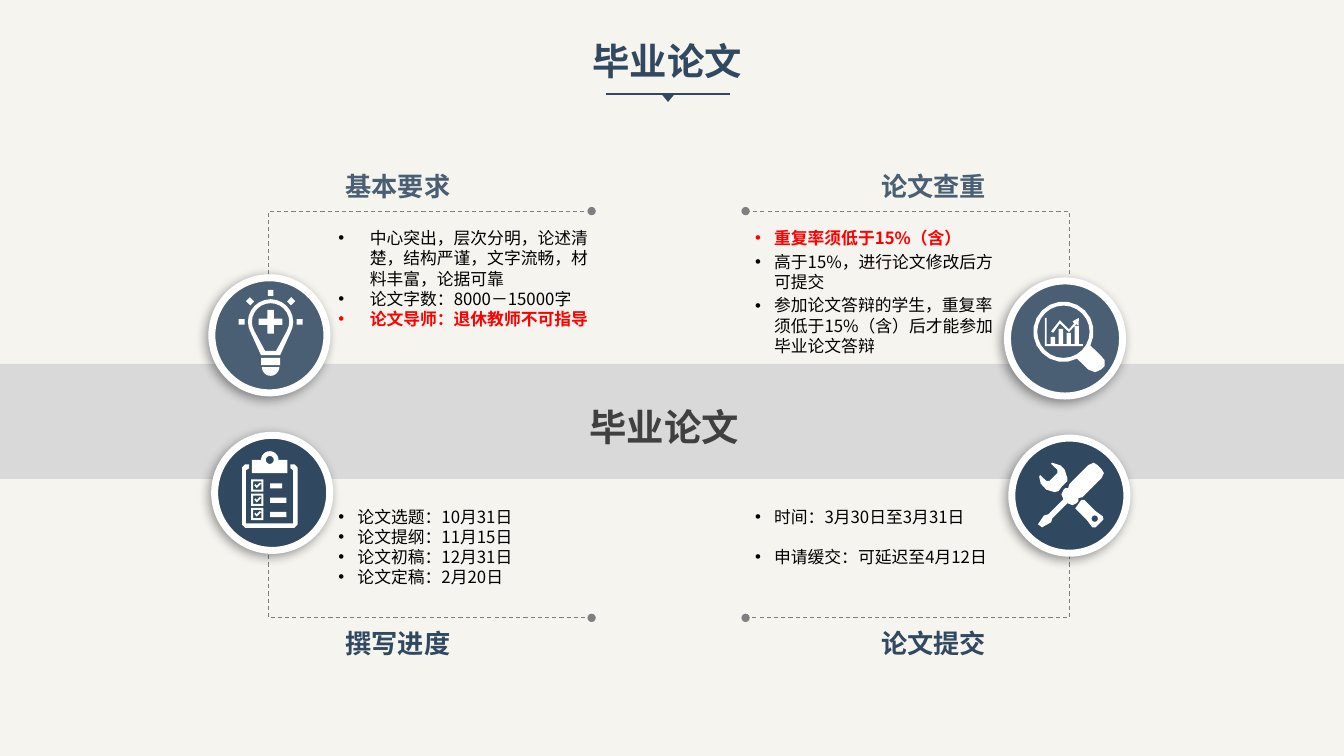
import math

from lxml import etree
from pptx import Presentation
from pptx.dml.color import RGBColor
from pptx.enum.dml import MSO_LINE
from pptx.enum.shapes import MSO_CONNECTOR, MSO_SHAPE
from pptx.enum.text import MSO_AUTO_SIZE, PP_ALIGN
from pptx.oxml.ns import qn
from pptx.util import Cm, Pt

RECT, OVAL, TRIANGLE = MSO_SHAPE.RECTANGLE, MSO_SHAPE.OVAL, MSO_SHAPE.ISOSCELES_TRIANGLE
STRAIGHT, DASH = MSO_CONNECTOR.STRAIGHT, MSO_LINE.DASH
LEFT, RIGHT = PP_ALIGN.LEFT, PP_ALIGN.RIGHT
GROW = MSO_AUTO_SIZE.SHAPE_TO_FIT_TEXT

CREAM = RGBColor(0xF5, 0xF4, 0xEF)
NAVY = RGBColor(0x30, 0x48, 0x60)
SLATE = RGBColor(0x4A, 0x5F, 0x74)
BAND = RGBColor(0xD9, 0xD9, 0xD9)
GREY = RGBColor(0x7F, 0x7F, 0x7F)
DARK = RGBColor(0x40, 0x40, 0x40)
BLACK = RGBColor(0, 0, 0)
RED = RGBColor(0xFF, 0, 0)
WHITE = RGBColor(0xFF, 0xFF, 0xFF)


def child(parent, tag, **attrs):
    return etree.SubElement(parent, qn(tag), attrs)


def box(x, y, w, h):
    return [(x, y), (x + w, y), (x + w, y + h), (x, y + h)]


def arc(cx, cy, r, start=0, end=345, step=15):
    angles = [math.radians(a) for a in range(start, end + 1, step)]
    return [(cx + r * math.cos(a), cy + r * math.sin(a)) for a in angles]


def shift(points, dx, dy):
    return [(x + dx, y + dy) for x, y in points]


class Deck:
    font = "Noto Sans CJK SC"
    line_height = 1.2

    def __init__(self):
        self.prs = Presentation()
        self.prs.slide_width, self.prs.slide_height = Cm(33.87), Cm(19.05)
        self.slide = self.prs.slides.add_slide(self.prs.slide_layouts[6])
        self.slide.background.fill.solid()
        self.slide.background.fill.fore_color.rgb = CREAM
        self.shapes = self.slide.shapes

    def paint(self, s, fill, line, width):
        s.shadow.inherit = False
        for part, color in ((s.fill, fill), (s.line.fill, line)):
            if color is None:
                part.background()
            else:
                part.solid()
                part.fore_color.rgb = color
        if line is not None:
            s.line.width = Pt(width)
        return s

    def shape(self, kind, x, y, w, h, fill, line=None, width=1, rot=0):
        s = self.shapes.add_shape(kind, Cm(x), Cm(y), Cm(w), Cm(h))
        s.rotation = rot
        return self.paint(s, fill, line, width)

    def outline(self, contours, fill=None, line=None, width=1, close=True):
        """One freeform; a contour inside another becomes a hole."""
        contours = [[(Cm(x), Cm(y)) for x, y in points] for points in contours]
        builder = self.shapes.build_freeform(*contours[0][0], scale=1.0)
        for i, points in enumerate(contours):
            if i:
                builder.move_to(*points[0])
            builder.add_line_segments(points[1:], close=close)
        return self.paint(builder.convert_to_shape(), fill, line, width)

    def rule(self, x1, x2, y, color, width):
        c = self.shapes.add_connector(STRAIGHT, Cm(x1), Cm(y), Cm(x2), Cm(y))
        c.line.color.rgb, c.line.width = color, Pt(width)
        child(c._element.spPr, "a:effectLst")

    def bracket(self, points):
        """Dashed corner line with a dot at each end."""
        s = self.outline([points], line=GREY, width=0.75, close=False)
        s.line.dash_style = DASH
        for end in ("a:headEnd", "a:tailEnd"):
            child(s.line._ln, end, type="oval")

    def badge(self, cx, cy, color, icon):
        """Grouped white-rimmed circle with a soft shadow and a white icon."""
        self.shapes = self.slide.shapes.add_group_shape().shapes
        s = self.shape(OVAL, cx - 1.45, cy - 1.45, 2.9, 2.9, color, WHITE, 5)
        shadow = child(s._element.spPr.find(qn("a:effectLst")), "a:outerShdw", blurRad=str(Pt(8)),
                       dist=str(Pt(3)), dir="8100000", algn="tr", rotWithShape="0")
        child(child(shadow, "a:srgbClr", val="000000"), "a:alpha", val="40000")
        self.outline([shift(points, cx, cy) for points in icon()], fill=WHITE)
        self.shapes = self.slide.shapes

    def text(self, x, y, w, h, items, size, color, bold=False, align=LEFT,
             wrap=True, indent=0, before=0):
        """Each item is a string or a (string, format dict) pair."""
        tf = self.shapes.add_textbox(Cm(x), Cm(y), Cm(w), Cm(h)).text_frame
        tf.word_wrap, tf.auto_size = wrap, GROW
        for i, item in enumerate(items):
            words, extra = item if isinstance(item, tuple) else (item, {})
            fmt = {"color": color, "bold": bold, "before": before, **extra}
            p = tf.paragraphs[0] if i == 0 else tf.add_paragraph()
            for name, value in {"alignment": align, "line_spacing": Pt(size * self.line_height),
                                "space_before": Pt(fmt["before"])}.items():
                setattr(p, name, value)
            if indent:
                pPr = p._p.get_or_add_pPr()
                pPr.set("marL", str(Cm(indent)))
                pPr.set("indent", str(-Cm(indent)))
                child(pPr, "a:buFont", typeface="Arial")
                child(pPr, "a:buChar", char="•")
            r = p.add_run()
            r.text = words
            for name, value in {"name": self.font, "size": Pt(size), "bold": fmt["bold"]}.items():
                setattr(r.font, name, value)
            r.font.color.rgb = fmt["color"]
            child(r._r.get_or_add_rPr(), "a:ea", typeface=self.font)


def bulb():
    cx, cy, thin, long = 0.03, -0.34, 0.08, 0.3
    glass = [arc(cx, cy, 0.57, 150, 390) + [(0.27, 0.5), (-0.21, 0.5)],
             arc(cx, cy, 0.47, 150, 390) + [(0.17, 0.39), (-0.11, 0.39)]]
    plus = [(-thin, -long), (thin, -long), (thin, -thin), (long, -thin), (long, thin), (thin, thin),
            (thin, long), (-thin, long), (-thin, thin), (-long, thin), (-long, -thin), (-thin, -thin)]
    rays = [arc(cx, cy, 0.66, a - 6, a + 6, 12) + arc(cx, cy, 0.81, a - 5, a + 5, 10)[::-1]
            for a in range(180, 361, 45)]
    cap = [box(-0.21, 0.57, 0.48, 0.18), arc(cx, 0.8, 0.22, 0, 180)]
    return glass + [shift(plus, cx, cy)] + rays + cap


def clipboard():
    frame = [(-0.58, -0.72), (-0.68, -0.72), (-0.76, -0.64), (-0.76, 0.8), (-0.68, 0.88),
             (0.56, 0.88), (0.64, 0.8), (0.64, -0.64), (0.56, -0.72), (0.46, -0.72),
             (0.46, -0.62), (0.53, -0.57), (0.53, 0.77), (-0.66, 0.77), (-0.66, -0.57),
             (-0.58, -0.62)]
    clip = [(-0.51, -0.5), (-0.51, -0.83), *arc(-0.06, -0.83, 0.22, 180, 360),
            (0.38, -0.83), (0.38, -0.5)]
    tick = [(0.08, 0.15), (0.11, 0.12), (0.14, 0.16), (0.22, 0.08), (0.25, 0.11), (0.14, 0.22)]
    parts = [frame, clip, arc(-0.06, -0.83, 0.1)]
    for i, bar in enumerate((0.3, 0.41, 0.41)):
        y = -0.34 + 0.36 * i
        parts += [box(-0.53, y, 0.31, 0.31), box(-0.48, y + 0.05, 0.21, 0.21),
                  shift(tick, -0.53, y), box(-0.05, y + 0.1, bar, 0.13)]
    return parts


def magnifier():
    rim = arc(-0.04, -0.17, 0.76, 63, 387, 18)
    handle = [(0.91, 0.44), (1, 0.55), (1, 0.69), (0.91, 0.78), (0.76, 0.85), (0.58, 0.78)]
    axes = [(-0.51, -0.52), (-0.46, -0.52), (-0.46, 0.14), (0.45, 0.14), (0.45, 0.19), (-0.51, 0.19)]
    trend = [(-0.35, -0.18), (-0.13, -0.46), (0.1, -0.23), (0.23, -0.38), (0.19, -0.43),
             (0.35, -0.52), (0.34, -0.33), (0.28, -0.36), (0.1, -0.16), (-0.13, -0.38),
             (-0.3, -0.14)]
    bars = [box(-0.36 + 0.2 * i, top, 0.11, 0.14 - top)
            for i, top in enumerate((-0.04, -0.24, -0.14, -0.32))]
    return [rim + handle, arc(-0.04, -0.17, 0.66), axes, trend] + bars


def tools():
    jaw = [(-0.18, -0.24), (-0.05, -0.37), (-0.05, -0.44), (-0.12, -0.66), (-0.22, -0.76),
           (-0.43, -0.83), (-0.46, -0.8), (-0.3, -0.65), (-0.3, -0.57), (-0.5, -0.37),
           (-0.58, -0.37), (-0.74, -0.52), (-0.76, -0.47), (-0.72, -0.3), (-0.58, -0.15),
           (-0.38, -0.09), (-0.28, -0.11)]
    handle = [(0.3, 0.11), (0.15, 0.32), (0.43, 0.6), (0.58, 0.8), (0.66, 0.8), (0.86, 0.6),
              (0.84, 0.52), (0.66, 0.39), (0.38, 0.11)]
    driver = [(0.81, -0.67), (0.71, -0.77), (0.61, -0.83), (0.48, -0.77), (0, -0.29),
              (-0.03, -0.19), (-0.1, -0.19), (-0.15, -0.14), (-0.2, -0.03), (-0.15, 0.09),
              (-0.53, 0.47), (-0.64, 0.5), (-0.79, 0.72), (-0.69, 0.8), (-0.46, 0.67),
              (-0.43, 0.57), (-0.05, 0.19), (0.08, 0.24), (0.18, 0.19), (0.23, 0.14),
              (0.23, 0.06), (0.33, 0.04), (0.81, -0.44), (0.87, -0.57)]
    return [jaw, handle, arc(0.64, 0.58, 0.08), driver]


def main():
    d = Deck()
    d.rule(15.27, 18.39, 2.36, NAVY, 1.5)
    d.shape(TRIANGLE, 16.67, 2.37, 0.33, 0.2, NAVY, rot=180)
    for start, corner in ((7.19, 5.32), (13.72, 15.57)):
        for outer, inner in ((6.76, 14.91), (26.95, 18.79)):
            d.bracket([(outer, start), (outer, corner), (inner, corner)])
    d.shape(RECT, 0, 9.17, 33.87, 2.9, BAND)
    d.text(14.6, 10.06, 4.3, 1.37, ["毕业论文"], 26.7, DARK, bold=True, wrap=False)

    for cx, cy, color, icon in ((6.79, 8.45, SLATE, bulb), (6.86, 12.42, NAVY, clipboard),
                                (26.84, 8.53, SLATE, magnifier), (26.95, 12.49, NAVY, tools)):
        d.badge(cx, cy, color, icon)

    for x, y, title, color, align in (
            (8.46, 4.16, "基本要求", SLATE, LEFT), (20.68, 4.16, "论文查重", SLATE, RIGHT),
            (8.46, 15.68, "撰写进度", NAVY, LEFT), (20.68, 15.68, "论文提交", NAVY, RIGHT)):
        d.text(x, y, 4.42, 1.04, [title], 18.7, color, bold=True, align=align)

    alert = {"color": RED, "bold": True}
    for x, y, w, h, indent, before, items in (
            (8.28, 5.62, 6.88, 2.79, 0.79, 0,
             ["中心突出，层次分明，论述清楚，结构严谨，文字流畅，材料丰富，论据可靠",
              "论文字数：8000－15000字", ("论文导师：退休教师不可指导", alert)]),
            (18.78, 5.62, 6.53, 3.51, 0.48, 2.4,
             [("重复率须低于15%（含）", alert), "高于15%，进行论文修改后方可提交",
              "参加论文答辩的学生，重复率须低于15%（含）后才能参加毕业论文答辩"]),
            (8.28, 12.64, 6.53, 2.29, 0.48, 0,
             ["论文选题：10月31日", "论文提纲：11月15日", "论文初稿：12月31日", "论文定稿：2月20日"]),
            (18.78, 12.64, 6.53, 2.29, 0.48, 0,
             ["时间：3月30日至3月31日", ("申请缓交：可延迟至4月12日", {"before": 14.4})])):
        d.text(x, y, w, h, items, 12, BLACK, indent=indent, before=before)

    d.text(14.68, 0.84, 4.32, 1.4, ["毕业论文"], 26.7, NAVY, bold=True, wrap=False)
    d.prs.save("out.pptx")


if __name__ == "__main__":
    main()
